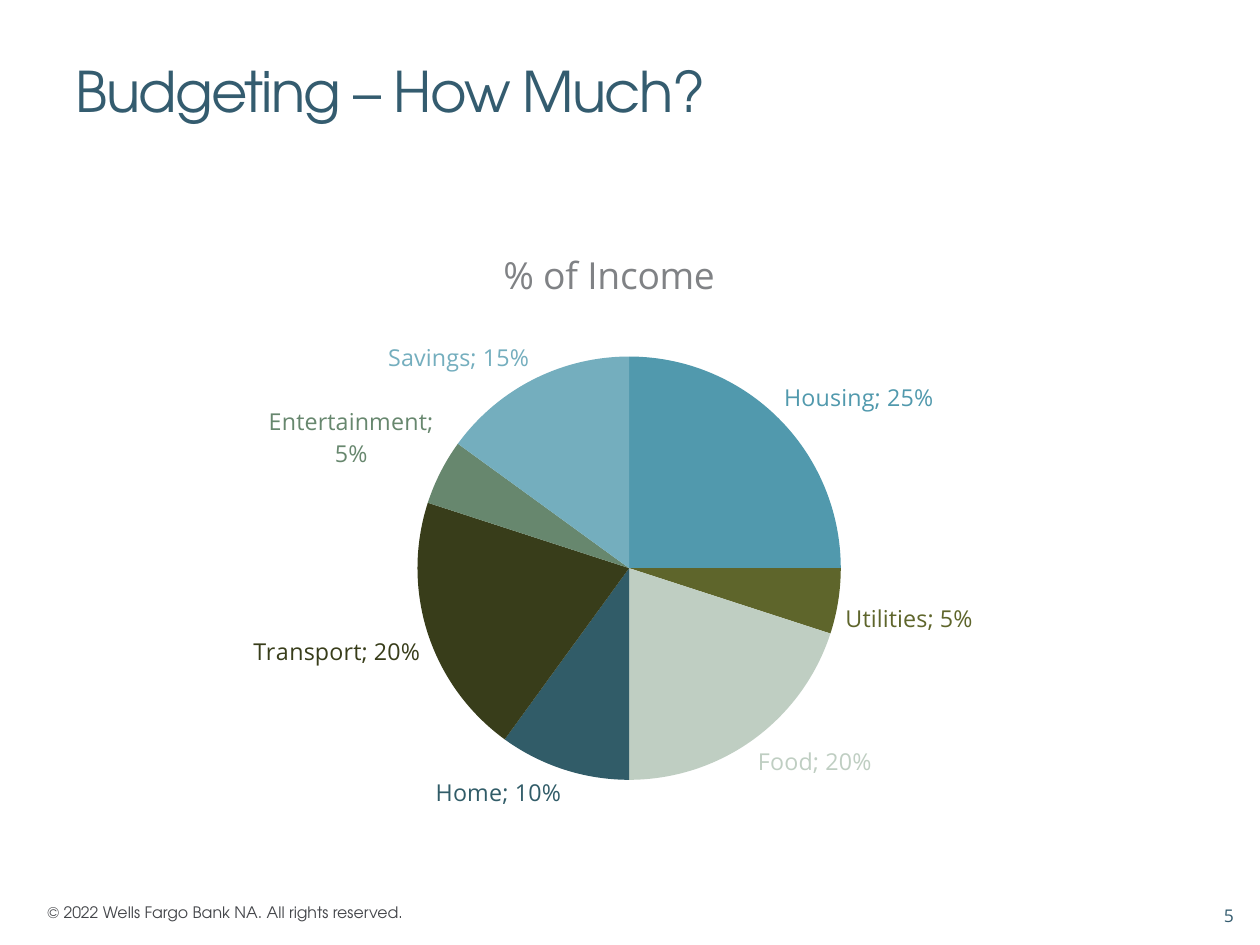
from lxml import etree
from pptx import Presentation
from pptx import util as u
from pptx.chart.data import CategoryChartData
from pptx.dml.color import RGBColor
from pptx.enum import chart as charts, text
from pptx.oxml import parse_xml
from pptx.oxml.ns import nsdecls, qn

PX = 914400 // 126  # one px in EMU
COLORS = {
    "title": "345C6F",
    "body": "44464A",
    "chart_title": "808285",
}
DISPLAY_FONT = "TeX Gyre Adventor"
BODY_FONT = "Open Sans"

# Category, share of income, slice colour
BUDGET = [
    ("Housing", 0.25, "5199AD"),
    ("Utilities", 0.05, "5E652B"),
    ("Food", 0.20, "BFCEC2"),
    ("Home", 0.10, "315C68"),
    ("Transport", 0.20, "383D1A"),
    ("Entertainment", 0.05, "67876E"),
    ("Savings", 0.15, "74AEBE"),
]


def box(*lengths):
    return [u.Emu(length * PX) for length in lengths]


def style_font(font, size, color, name=BODY_FONT):
    font.size = u.Pt(size)
    font.bold = False
    font.name = name
    font.color.rgb = RGBColor.from_string(color)


def write(frame, content, size, color, font=BODY_FONT, align=text.PP_ALIGN.LEFT,
          inset=None, wrap=True, line_spacing=None, spacing=None):
    """Fill a text frame with one formatted run."""
    frame.word_wrap = wrap
    frame.vertical_anchor = text.MSO_ANCHOR.TOP
    if inset is not None:
        frame.margin_left = frame.margin_right = inset
        frame.margin_top = frame.margin_bottom = inset
    paragraph = frame.paragraphs[0]
    paragraph.alignment = align
    if line_spacing:
        paragraph.line_spacing = line_spacing
    run = paragraph.add_run()
    run.text = content
    style_font(run.font, size, color, font)
    if spacing:
        run.font._element.set("spc", str(spacing))


def add_title(slide, content):
    title = slide.shapes.title
    title.left, title.top, title.width, title.height = box(76, 53, 1109, 122)
    title.text_frame.auto_size = text.MSO_AUTO_SIZE.NONE
    write(title.text_frame, content, 32, COLORS["title"], DISPLAY_FONT,
          inset=0, line_spacing=1.05, spacing=-100)


def place_plot(chart, **fractions):
    """Fix the inner plot area, as fractions of the chart's size."""
    plot_area = chart._chartSpace.chart.plotArea
    for layout in plot_area.findall(qn("c:layout")):
        plot_area.remove(layout)
    sizes = "".join(f'<c:{key} val="{value}"/>' for key, value in fractions.items())
    plot_area.insert(0, parse_xml(
        f'<c:layout {nsdecls("c")}><c:manualLayout><c:layoutTarget val="inner"/>'
        f'<c:xMode val="edge"/><c:yMode val="edge"/>{sizes}'
        '</c:manualLayout></c:layout>'))


def complete_labels(series):
    """Show category and percentage in each point label."""
    for label in series._element.iter(qn("c:dLbl")):
        label.find(qn("c:showCatName")).set("val", "1")
        label.insert(1, parse_xml(
            f'<c:numFmt {nsdecls("c")} formatCode="0%" sourceLinked="0"/>'))
        etree.SubElement(label, qn("c:separator")).text = "; "


def add_budget_pie(slide):
    data = CategoryChartData(number_format="0%")
    data.categories = [name for name, _, _ in BUDGET]
    data.add_series("Series 1", [share for _, share, _ in BUDGET])
    chart = slide.shapes.add_chart(
        charts.XL_CHART_TYPE.PIE, *box(105, 220, 1008, 611), data).chart
    style_font(chart.font, 10, COLORS["body"])
    chart.has_legend = False
    chart.has_title = True
    write(chart.chart_title.text_frame, "% of Income", 21.3,
          COLORS["chart_title"], align=text.PP_ALIGN.CENTER)
    place_plot(chart, x=0.31, y=0.22, w=0.42, h=0.7)

    # Slices and their matching labels
    plot = chart.plots[0]
    plot.vary_by_categories = True
    series = plot.series[0]
    labels = series.data_labels
    labels.show_value = labels.show_category_name = True
    labels.number_format, labels.number_format_is_linked = "0%", False
    labels.position = charts.XL_LABEL_POSITION.OUTSIDE_END
    for index, (_, _, color) in enumerate(BUDGET):
        point = series.points[index]
        point.format.fill.solid()
        point.format.fill.fore_color.rgb = RGBColor.from_string(color)
        point.format.line.fill.background()
        style_font(point.data_label.font, 13.3, color)
        point.data_label.position = charts.XL_LABEL_POSITION.OUTSIDE_END
    complete_labels(series)


def add_footer(slide):
    copyright_box = slide.shapes.add_textbox(*box(35, 897, 384, 31))
    write(copyright_box.text_frame, "© 2022 Wells Fargo Bank NA. All rights reserved.",
          9, COLORS["body"], DISPLAY_FONT, wrap=False)
    copyright_box.text_frame.auto_size = text.MSO_AUTO_SIZE.SHAPE_TO_FIT_TEXT
    number_box = slide.shapes.add_textbox(*box(1184, 905, 50, 40))
    write(number_box.text_frame, "5", 10, COLORS["title"],
          align=text.PP_ALIGN.RIGHT, inset=0)


def main():
    presentation = Presentation()
    presentation.slide_width, presentation.slide_height = box(1260, 945)
    slide = presentation.slides.add_slide(presentation.slide_layouts[5])
    add_title(slide, "Budgeting – How Much?")
    add_budget_pie(slide)
    add_footer(slide)
    presentation.save("out.pptx")


if __name__ == "__main__":
    main()
